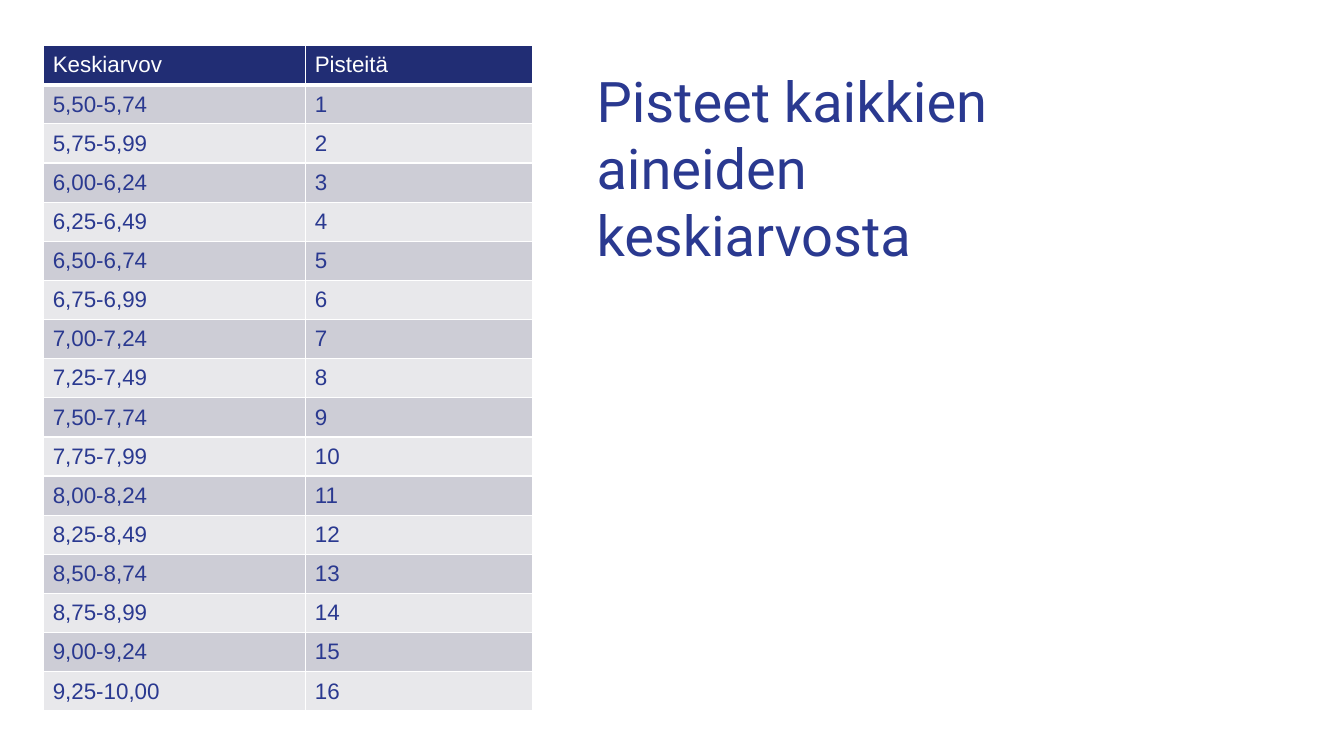
from lxml import etree
from pptx import Presentation
from pptx.dml.color import RGBColor
from pptx.enum.text import MSO_ANCHOR
from pptx.oxml.ns import qn
from pptx.util import Pt

TOP, MIDDLE = MSO_ANCHOR.TOP, MSO_ANCHOR.MIDDLE

WHITE = RGBColor(0xFF, 0xFF, 0xFF)
BLUE = RGBColor(0x2A, 0x39, 0x90)
NAVY = RGBColor(0x21, 0x2D, 0x74)
BAND_DARK = RGBColor(0xCD, 0xCD, 0xD6)
BAND_LIGHT = RGBColor(0xE8, 0xE8, 0xEB)

COL_WIDTHS = (187.2, 162)
ROW_HEIGHT = 27.95


def set_borders(cell, color, bottom):
    """Draw 1 pt lines on three sides and a given width below."""
    tcPr = cell._tc.get_or_add_tcPr()
    for side, width in (("L", 1), ("R", 1), ("T", 1), ("B", bottom)):
        ln = etree.SubElement(tcPr, qn(f"a:ln{side}"), w=str(Pt(width)))
        fill = etree.SubElement(ln, qn("a:solidFill"))
        etree.SubElement(fill, qn("a:srgbClr"), val=str(color))


prs = Presentation()
prs.slide_width, prs.slide_height = Pt(960), Pt(540)
s = prs.slides.add_slide(prs.slide_layouts[6])

# Title
sp = s.shapes.add_textbox(Pt(419), Pt(44), Pt(362), Pt(151))
tf = sp.text_frame
tf.word_wrap = True
tf.vertical_anchor = TOP
p = tf.paragraphs[0]
p.text = "Pisteet kaikkien aineiden keskiarvosta"
p.line_spacing = Pt(47.9)
p.font.name, p.font.size, p.font.color.rgb = "Roboto", Pt(40), BLUE

# Grade bands: quarter-point steps, the last one closed at 10,00
rows = [("Keskiarvov", "Pisteitä")]
for points in range(1, 17):
    low = 525 + 25 * points
    high = 1000 if points == 16 else low + 24
    band = f"{low / 100:.2f}-{high / 100:.2f}".replace(".", ",")
    rows.append((band, str(points)))

# Points table
table = s.shapes.add_table(
    len(rows), len(COL_WIDTHS), Pt(31.2), Pt(32.6),
    Pt(sum(COL_WIDTHS)), Pt(ROW_HEIGHT * len(rows))).table
for col, width in zip(table.columns, COL_WIDTHS):
    col.width = Pt(width)

for i, texts in enumerate(rows):
    table.rows[i].height = Pt(ROW_HEIGHT)
    header = i == 0
    background = NAVY if header else BAND_DARK if i % 2 else BAND_LIGHT
    for j, text in enumerate(texts):
        cell = table.cell(i, j)
        set_borders(cell, WHITE, 3 if header else 1)
        cell.fill.solid()
        cell.fill.fore_color.rgb = background
        cell.vertical_anchor = MIDDLE
        cell.margin_left = cell.margin_right = Pt(6.5)
        cell.margin_top = cell.margin_bottom = Pt(3.2)
        p = cell.text_frame.paragraphs[0]
        p.text = text
        p.font.name, p.font.size, p.font.bold = "Arial", Pt(16), False
        p.font.color.rgb = WHITE if header else BLUE

prs.save("out.pptx")
